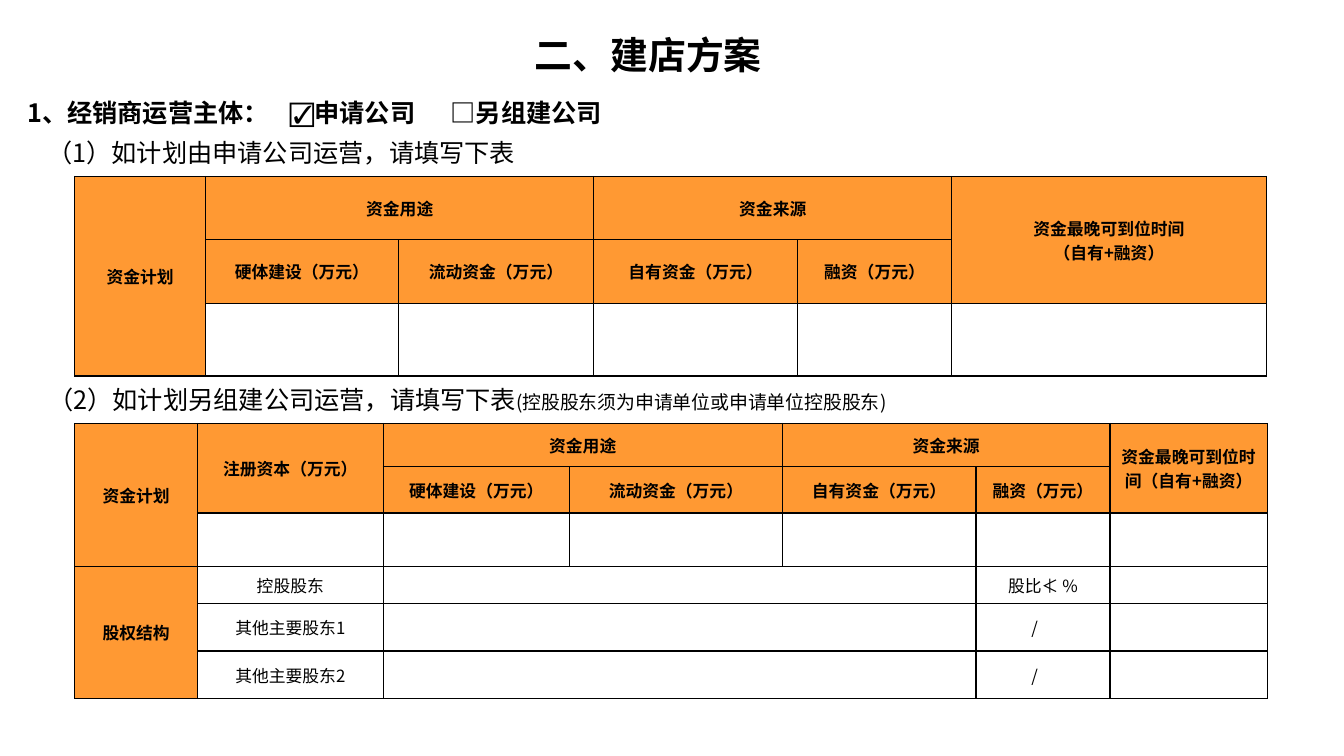
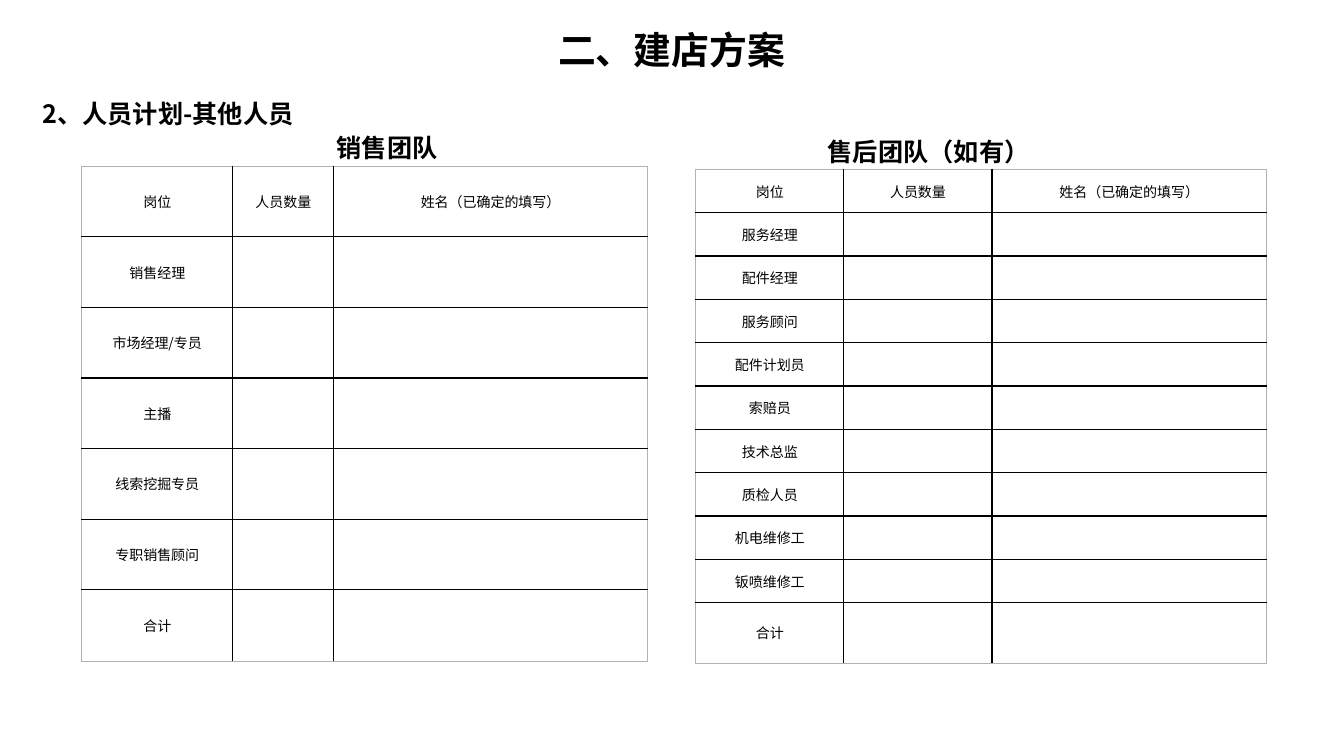
from lxml import etree
from pptx import Presentation
from pptx.dml.color import RGBColor
from pptx.enum import text as text_enum
from pptx.oxml import ns
from pptx.util import Inches, Pt

BLACK = "000000"
GREY = "B2B2B2"
ORANGE = "FF9933"
BODY_FONT = "Noto Sans CJK SC"
TITLE_FONT = "Times New Roman"
CENTER = text_enum.PP_ALIGN.CENTER
MIDDLE = text_enum.MSO_ANCHOR.MIDDLE
TOP = text_enum.MSO_ANCHOR.TOP
TEAM_HEADER = ["岗位", "人员数量", "姓名（已确定的填写）"]
SALES_ROLES = ["销售经理", "市场经理/专员", "主播", "线索挖掘专员", "专职销售顾问", "合计"]
SERVICE_ROLES = ["服务经理", "配件经理", "服务顾问", "配件计划员", "索赔员",
                 "技术总监", "质检人员", "机电维修工", "钣喷维修工", "合计"]
USES = ["硬体建设（万元）", "流动资金（万元）"]
SOURCES = ["自有资金（万元）", "融资（万元）"]


def color(value):
    """Turn a hex string into a colour."""
    return RGBColor.from_string(value)


def add_run(paragraph, content, size=18, bold=False, font=BODY_FONT):
    """Append formatted text to a paragraph."""
    run = paragraph.add_run()
    run.text = content
    run.font.size = Pt(size)
    run.font.bold = bold
    run.font.color.rgb = color(BLACK)
    run.font.name = font
    east_asian = etree.SubElement(run.font._element, ns.qn("a:ea"))
    east_asian.set("typeface", BODY_FONT)


def add_text(slide, left, top, width, height, content, anchor=TOP, align=None,
             line_spacing=None, indent=None, tabs=(), **run_format):
    """Add a wrapped one-paragraph text box and return its paragraph."""
    shape = slide.shapes.add_textbox(Inches(left), Inches(top), Inches(width), Inches(height))
    frame = shape.text_frame
    frame.word_wrap = True
    frame.vertical_anchor = anchor
    frame.margin_left = frame.margin_right = Inches(0.09)
    frame.margin_top = frame.margin_bottom = Inches(0.04)
    paragraph = frame.paragraphs[0]
    paragraph.alignment = align
    paragraph.line_spacing = line_spacing
    properties = paragraph._p.get_or_add_pPr()
    if indent:
        properties.set("indent", str(Inches(indent)))
    if tabs:
        tab_list = etree.SubElement(properties, ns.qn("a:tabLst"))
        for position in tabs:
            etree.SubElement(tab_list, ns.qn("a:tab"), pos=str(Inches(position)), algn="l")
    add_run(paragraph, content, **run_format)
    return paragraph


def add_title(slide, left, top):
    """Add the shared section title."""
    add_text(slide, left, top, 3.92, 0.54, "二、建店方案", align=CENTER,
             size=27, bold=True, font=TITLE_FONT)


def add_team_heading(slide, left, top, width, content):
    """Add the heading above a team table."""
    add_text(slide, left, top, width, 0.54, content, anchor=MIDDLE,
             line_spacing=1.5, indent=0.21, bold=True)


def set_border(cell, side, value):
    """Draw one side of a cell."""
    line = etree.SubElement(cell._tc.get_or_add_tcPr(), ns.qn(f"a:ln{side}"), w=str(Pt(1)))
    fill = etree.SubElement(line, ns.qn("a:solidFill"))
    etree.SubElement(fill, ns.qn("a:srgbClr"), val=value)


def add_table(slide, left, top, columns, heights, rows, size, spans=None,
              header_rows=0, header_columns=0, outline=BLACK):
    """Add a bordered table with centred text and optional orange headers."""
    frame = slide.shapes.add_table(len(heights), len(columns), Inches(left), Inches(top),
                                   Inches(sum(columns)), Inches(sum(heights)))
    table = frame.table
    table.first_row = table.horz_banding = False
    for column, width in zip(table.columns, columns):
        column.width = Inches(width)
    for row, height in zip(table.rows, heights):
        row.height = Inches(height)
    last_row, last_column = len(heights) - 1, len(columns) - 1
    for y, contents in enumerate(rows):
        for x, content in enumerate(contents):
            cell = table.cell(y, x)
            edges = {"L": x == 0, "R": x == last_column, "T": y == 0, "B": y == last_row}
            for side, outer in edges.items():
                set_border(cell, side, outline if outer else BLACK)
            header = y < header_rows or x < header_columns
            if header:
                cell.fill.solid()
                cell.fill.fore_color.rgb = color(ORANGE)
            else:
                cell.fill.background()
            cell.margin_left = cell.margin_right = Inches(0.07)
            cell.margin_top = cell.margin_bottom = 0
            cell.vertical_anchor = MIDDLE
            for number, line in enumerate(content.split("\n") if content else []):
                text_frame = cell.text_frame
                paragraph = text_frame.add_paragraph() if number else text_frame.paragraphs[0]
                paragraph.alignment = CENTER
                add_run(paragraph, line, size=size, bold=header)
    for (y, x), (height, width) in (spans or {}).items():
        table.cell(y, x).merge(table.cell(y + height - 1, x + width - 1))


def add_team_table(slide, left, top, columns, heights, roles):
    """Add a staffing table with one row per role."""
    rows = [TEAM_HEADER] + [[role, "", ""] for role in roles]
    add_table(slide, left, top, columns, heights, rows, size=10, outline=GREY)


def build_funding_slide(slide):
    """Build the slide on the operating company and its funding."""
    add_title(slide, 4.47, 0.27)
    add_text(slide, 0.18, 0.93, 8.21, 0.39, "1、经销商运营主体：\t☑申请公司\t□另组建公司",
             tabs=(2.6, 4.2), bold=True)
    add_text(slide, 0.38, 1.32, 6.64, 0.39, "（1）如计划由申请公司运营，请填写下表")
    add_table(slide, 0.74, 1.75, [1.3, 1.91, 1.94, 2.02, 1.53, 3.12], [0.63, 0.63, 0.72], [
        ["资金计划", "资金用途", "", "资金来源", "", "资金最晚可到位时间\n（自有+融资）"],
        ["", *USES, *SOURCES, ""],
        [""] * 6,
    ], size=12, header_rows=2, header_columns=1,
        spans={(0, 0): (3, 1), (0, 1): (1, 2), (0, 3): (1, 2), (0, 5): (2, 1)})
    paragraph = add_text(slide, 0.39, 3.77, 11.73, 0.39, "（2）如计划另组建公司运营，请填写下表")
    add_run(paragraph, "(控股股东须为申请单位或申请单位控股股东)", size=13.5)
    holders = {(y, 2): (1, 3) for y in range(3, 6)}
    add_table(slide, 0.74, 4.2, [1.22, 1.84, 1.85, 2.11, 1.92, 1.33, 1.56],
              [0.43, 0.46, 0.53, 0.37, 0.47, 0.47], [
        ["资金计划", "注册资本（万元）", "资金用途", "", "资金来源", "",
         "资金最晚可到位时间（自有+融资）"],
        ["", "", *USES, *SOURCES, ""],
        [""] * 7,
        ["股权结构", "控股股东", "", "", "", "股比≮ %", ""],
        ["", "其他主要股东1", "", "", "", "/　", ""],
        ["", "其他主要股东2", "", "", "", "/　", ""],
    ], size=12, header_rows=2, header_columns=1,
        spans={(0, 0): (3, 1), (0, 1): (2, 1), (0, 2): (1, 2), (0, 4): (1, 2),
               (0, 6): (2, 1), (3, 0): (3, 1), **holders})


def build_staff_slide(slide):
    """Build the slide on the sales and service teams."""
    add_title(slide, 4.7, 0.22)
    add_text(slide, 0.33, 0.93, 2.72, 0.39, "2、人员计划-其他人员", anchor=MIDDLE, bold=True)
    add_team_heading(slide, 3.04, 1.12, 1.65, "销售团队")
    add_team_table(slide, 0.81, 1.65, [1.5, 1, 3.11], [0.7] * 6 + [0.71], SALES_ROLES)
    add_team_heading(slide, 7.91, 1.16, 2.52, "售后团队（如有）")
    add_team_table(slide, 6.9, 1.68, [1.47, 1.47, 2.72], [0.43] * 10 + [0.6], SERVICE_ROLES)


def main():
    """Create and save the presentation."""
    presentation = Presentation()
    presentation.slide_width = Inches(13.33)
    presentation.slide_height = Inches(7.5)
    for build in (build_funding_slide, build_staff_slide):
        build(presentation.slides.add_slide(presentation.slide_layouts[6]))
    presentation.save("out.pptx")


if __name__ == "__main__":
    main()
